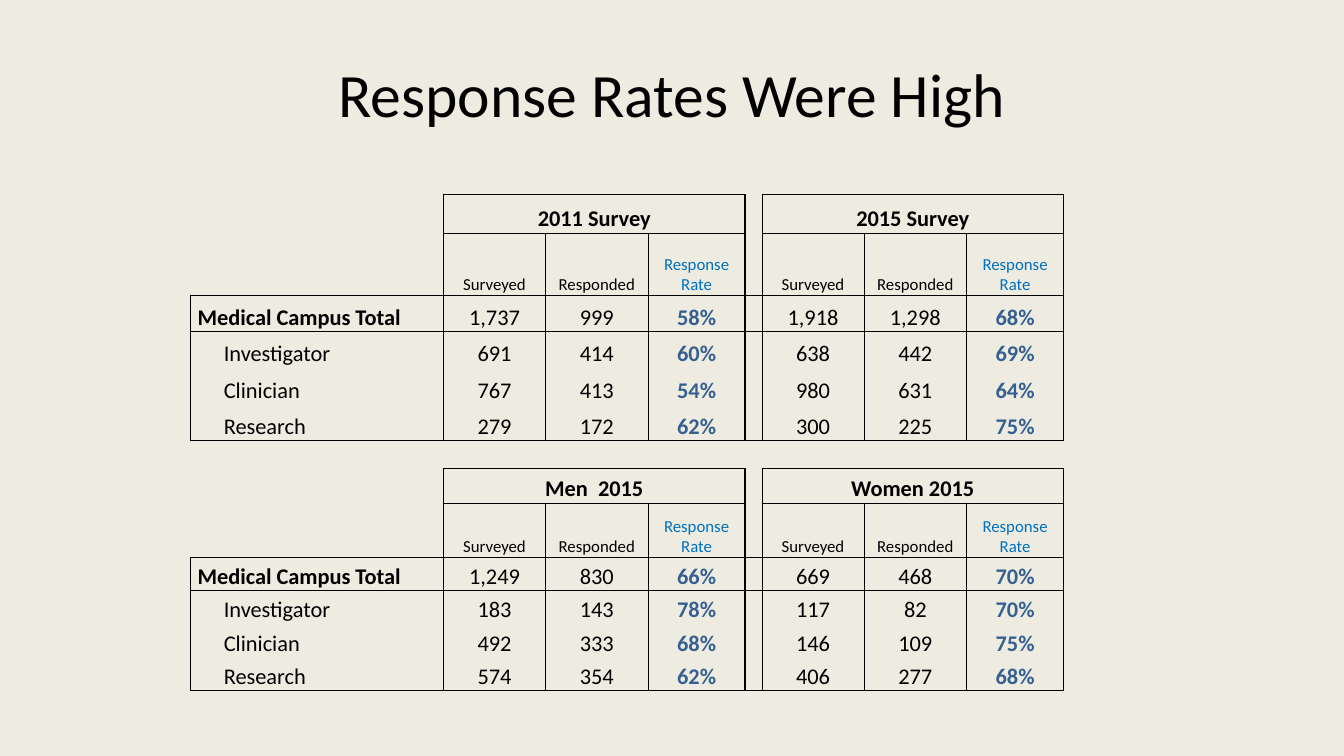
from lxml import etree
from pptx import Presentation
from pptx.dml.color import RGBColor
from pptx.enum.text import MSO_ANCHOR, PP_ALIGN
from pptx.oxml.ns import qn
from pptx.util import Inches, Pt

CENTER, LEFT = PP_ALIGN.CENTER, PP_ALIGN.LEFT
MIDDLE, BOTTOM = MSO_ANCHOR.MIDDLE, MSO_ANCHOR.BOTTOM

FONT = "Calibri"
BLACK, CREAM, HEADING_BLUE, RATE_BLUE = "000000", "EEECE1", "0070C0", "366092"
THIN, THICK = 0.5, 1

SLIDE_WIDTH, SLIDE_HEIGHT = 13.33, 7.5
GROUP_COLUMNS = [1.01, 1.02, 0.96]
COLUMNS = [0.32, 2.19, *GROUP_COLUMNS, 0.17, *GROUP_COLUMNS]
GROUP_STARTS = (2, 6)
INNER_EDGES = (3, 4, 7, 8)
LABEL_EDGE = 1
HEADINGS = ["Surveyed", "Responded", "Response Rate"]
TOTAL_ROW = 2
LABELS = ["Medical Campus Total", "Investigator", "Clinician", "Research"]

TABLES = [
    {
        "box": (1.89, 1.93, 8.68, 2.43),
        "rows": [0.38, 0.62, 0.36, 0.36, 0.36, 0.36],
        "groups": {
            "2011 Survey": [("1,737", "999", "58%"), ("691", "414", "60%"),
                            ("767", "413", "54%"), ("279", "172", "62%")],
            "2015 Survey": [("1,918", "1,298", "68%"), ("638", "442", "69%"),
                            ("980", "631", "64%"), ("300", "225", "75%")],
        },
    },
    {
        "box": (1.89, 4.65, 8.68, 2.18),
        "rows": [0.34, 0.54, 0.33, 0.33, 0.33, 0.33],
        "groups": {
            "Men  2015": [("1,249", "830", "66%"), ("183", "143", "78%"),
                          ("492", "333", "68%"), ("574", "354", "62%")],
            "Women 2015": [("669", "468", "70%"), ("117", "82", "70%"),
                           ("146", "109", "75%"), ("406", "277", "68%")],
        },
    },
]


def color(hex_code):
    return RGBColor.from_string(hex_code)


def write(cell, text, size=16, ink=BLACK, bold=False, align=CENTER):
    cell.text = text
    paragraph = cell.text_frame.paragraphs[0]
    paragraph.alignment = align
    paragraph.font.name = FONT
    paragraph.font.size = Pt(size)
    paragraph.font.bold = bold
    paragraph.font.color.rgb = color(ink)
    return paragraph


def vertical_weight(row, edge):
    if edge == LABEL_EDGE or (edge == 0 and row < TOTAL_ROW):
        return 0
    if edge in INNER_EDGES:
        return THIN if row else 0
    return THIN if edge == 0 else THICK


def horizontal_weight(edge, column, last_edge):
    in_group = any(start <= column < start + 3 for start in GROUP_STARTS)
    if edge in (0, last_edge) and in_group:
        return THICK
    if edge in (TOTAL_ROW, TOTAL_ROW + 1, last_edge) or (edge == 1 and in_group):
        return THIN
    return 0


def rule_cell(cell, row, column, last_edge):
    right_edge = column + (cell.span_width if cell.is_merge_origin else 1)
    weights = {
        "a:lnL": vertical_weight(row, column),
        "a:lnR": vertical_weight(row, right_edge),
        "a:lnT": horizontal_weight(row, column, last_edge),
        "a:lnB": horizontal_weight(row + 1, column, last_edge),
    }
    properties = cell._tc.get_or_add_tcPr()
    for tag, weight in weights.items():
        line = etree.SubElement(properties, qn(tag), w=str(Pt(weight)))
        if weight:
            fill = etree.SubElement(line, qn("a:solidFill"))
            etree.SubElement(fill, qn("a:srgbClr"), val=BLACK)
        else:
            etree.SubElement(line, qn("a:noFill"))


def format_cell(cell, row, column, last_edge):
    cell.margin_left = cell.margin_right = cell.margin_top = Inches(0.01)
    cell.margin_bottom = 0
    cell.vertical_anchor = BOTTOM
    rule_cell(cell, row, column, last_edge)
    if row == TOTAL_ROW:
        cell.fill.solid()
        cell.fill.fore_color.rgb = color(CREAM)
    else:
        cell.fill.background()
    write(cell, "")


def fill_labels(table):
    for row, label in enumerate(LABELS, TOTAL_ROW):
        if row == TOTAL_ROW:
            total = write(table.cell(row, 0), label, bold=True, align=LEFT)
            total._p.get_or_add_pPr().set("marL", str(Inches(0.06)))
        else:
            write(table.cell(row, 1), label, align=LEFT)


def fill_group(table, start, name, records):
    write(table.cell(0, start), name, bold=True)
    for offset, heading in enumerate(HEADINGS):
        is_rate = offset == len(HEADINGS) - 1
        write(table.cell(1, start + offset), heading, 12, HEADING_BLUE if is_rate else BLACK)
        for row, record in enumerate(records, TOTAL_ROW):
            write(table.cell(row, start + offset), record[offset],
                  ink=RATE_BLUE if is_rate else BLACK, bold=is_rate)


def add_response_table(slide, box, rows, groups):
    frame = slide.shapes.add_table(len(rows), len(COLUMNS), *map(Inches, box))
    table = frame.table
    table.first_row = table.horz_banding = False
    for column, width in zip(table.columns, COLUMNS):
        column.width = Inches(width)
    for row, height in zip(table.rows, rows):
        row.height = Inches(height)
    for start in GROUP_STARTS:
        table.cell(0, start).merge(table.cell(0, start + 2))
    table.cell(TOTAL_ROW, 0).merge(table.cell(TOTAL_ROW, 1))
    for row in range(len(rows)):
        for column in range(len(COLUMNS)):
            format_cell(table.cell(row, column), row, column, len(rows))
    fill_labels(table)
    for start, (name, records) in zip(GROUP_STARTS, groups.items()):
        fill_group(table, start, name, records)


def add_title(slide, text, box):
    title = slide.shapes.title
    title.left, title.top, title.width, title.height = map(Inches, box)
    title.text_frame.vertical_anchor = MIDDLE
    write(title, text, 44)


def main():
    deck = Presentation()
    deck.slide_width, deck.slide_height = Inches(SLIDE_WIDTH), Inches(SLIDE_HEIGHT)
    slide = deck.slides.add_slide(deck.slide_layouts.get_by_name("Title Only"))
    slide.background.fill.solid()
    slide.background.fill.fore_color.rgb = color(CREAM)
    add_title(slide, "Response Rates Were High",
              (SLIDE_WIDTH * 0.05, SLIDE_HEIGHT * 0.04, SLIDE_WIDTH * 0.9, SLIDE_HEIGHT / 6))
    for survey in TABLES:
        add_response_table(slide, **survey)
    deck.save("out.pptx")


if __name__ == "__main__":
    main()
